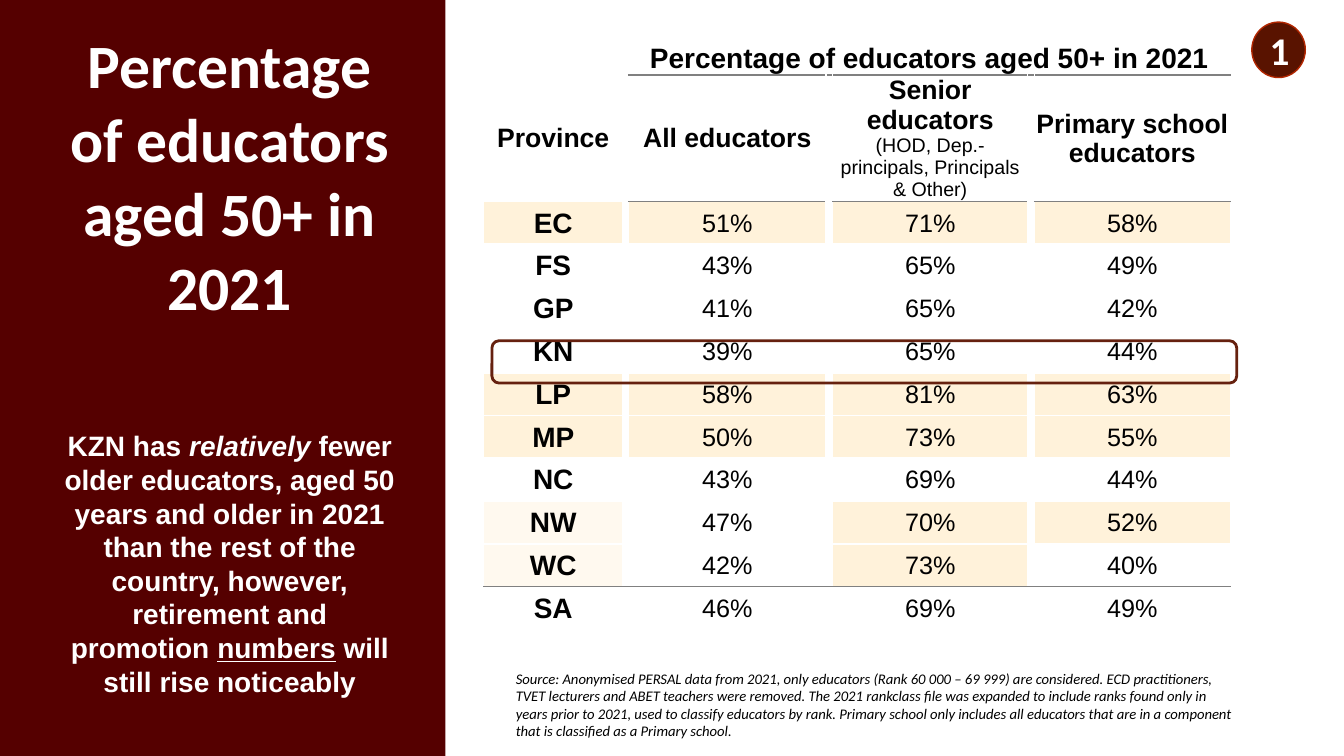
from lxml import etree
from pptx import Presentation
from pptx.dml.color import RGBColor
from pptx.enum.shapes import MSO_SHAPE
from pptx.enum.text import MSO_ANCHOR, PP_ALIGN
from pptx.oxml.ns import qn
from pptx.util import Pt

RECT, OVAL, ROUNDED = MSO_SHAPE.RECTANGLE, MSO_SHAPE.OVAL, MSO_SHAPE.ROUNDED_RECTANGLE
MIDDLE, BOTTOM, CENTER = MSO_ANCHOR.MIDDLE, MSO_ANCHOR.BOTTOM, PP_ALIGN.CENTER

COLORS = {
    "panel": "550000", "badge": "591300", "badge_line": "B22600",
    "highlight": "66210F", "high": "FFF2DA", "partly_high": "FFF9EF",
    "rule": "808080", "white": "FFFFFF", "black": "000000",
}
rgb = {name: RGBColor.from_string(value) for name, value in COLORS.items()}


def add_run(p, text, size, color="black", name="Arial", **formats):
    r = p.add_run()
    r.text = text
    r.font.color.rgb = rgb[color]
    for key, value in {"size": Pt(size), "name": name, **formats}.items():
        setattr(r.font, key, value)


def set_border(cell, position, tag, color, width):
    """Add one cell border; position keeps the borders ahead of the fill."""
    ln = etree.Element(qn(tag), w=str(Pt(width)))
    fill = etree.SubElement(ln, qn("a:solidFill"))
    etree.SubElement(fill, qn("a:srgbClr"), val=COLORS[color])
    cell._tc.get_or_add_tcPr().insert(position, ln)


prs = Presentation()
prs.slide_width, prs.slide_height = Pt(960), Pt(540)
s = prs.slides.add_slide(prs.slide_layouts[6])

# Side panel
sp = s.shapes.add_shape(RECT, Pt(0), Pt(0), Pt(318.2), Pt(540))
sp.shadow.inherit = False
sp.fill.solid()
sp.fill.fore_color.rgb = rgb["panel"]
sp.line.fill.background()

# Table of provinces
HEADERS = ["Province", "All educators", "Senior educators", "Primary school educators"]
PROVINCES = [
    ("EC", 51, 71, 58), ("FS", 43, 65, 49), ("GP", 41, 65, 42), ("KN", 39, 65, 44),
    ("LP", 58, 81, 63), ("MP", 50, 73, 55), ("NC", 43, 69, 44), ("NW", 47, 70, 52),
    ("WC", 42, 73, 40), ("SA", 46, 69, 49),
]
HIGH_FROM = (50, 70, 50)
COL_WIDTHS = [99.2, 3.8, 141, 4.9, 139.2, 4.9, 139.8]
ROW_HEIGHTS = [35.3, 90.7] + [30.57] * len(PROVINCES)
LAST_ROW = len(ROW_HEIGHTS) - 1

table = s.shapes.add_table(len(ROW_HEIGHTS), len(COL_WIDTHS), Pt(345.6), Pt(18),
                           Pt(sum(COL_WIDTHS)), Pt(sum(ROW_HEIGHTS))).table
table.first_row = table.horz_banding = False
for col, width in zip(table.columns, COL_WIDTHS):
    col.width = Pt(width)
for row, height in zip(table.rows, ROW_HEIGHTS):
    row.height = Pt(height)

# Border below each cell, shared with the cell underneath
borders = {}
for i in range(LAST_ROW):
    for j in range(len(COL_WIDTHS)):
        borders[i, j] = ("white", 1.5)
        if i == 0 and j >= 2:
            borders[i, j] = ("rule", 1.5)
        elif i == LAST_ROW - 1 or (i == 1 and j in (2, 4, 6)):
            borders[i, j] = ("rule", 0.5)

for i in range(len(ROW_HEIGHTS)):
    for j in range(len(COL_WIDTHS)):
        cell = table.cell(i, j)
        cell.margin_left = cell.margin_right = cell.margin_top = Pt(0.7)
        cell.margin_bottom = Pt(0)
        cell.vertical_anchor = MIDDLE
        cell.text_frame.paragraphs[0].alignment = CENTER
        cell.fill.background()
        position = 0
        for tag, key in (("a:lnT", (i - 1, j)), ("a:lnB", (i, j))):
            if key in borders:
                set_border(cell, position, tag, *borders[key])
                position += 1

heading = table.cell(0, 2)
heading.merge(table.cell(0, 6))
heading.vertical_anchor = BOTTOM
add_run(heading.text_frame.paragraphs[0], "Percentage of educators aged 50+ in 2021",
        20, bold=True)

for k, text in enumerate(HEADERS):
    add_run(table.cell(1, 2 * k).text_frame.paragraphs[0], text, 19, bold=True)
p = table.cell(1, 4).text_frame.paragraphs[0]
p.add_line_break()
add_run(p, "(HOD, Dep.- principals, Principals & Other)", 14, bold=False)

for i, (province, *shares) in enumerate(PROVINCES, start=2):
    high = [share >= limit and province != "SA" for share, limit in zip(shares, HIGH_FROM)]
    if province in ("FS", "GP", "KN", "NC", "SA"):
        fills = [None]
    else:
        fills = ["high" if all(high) else "partly_high"]
    fills += ["high" if is_high else None for is_high in high]
    texts = [province] + [f"{share}%" for share in shares]
    for k, (text, fill) in enumerate(zip(texts, fills)):
        cell = table.cell(i, 2 * k)
        add_run(cell.text_frame.paragraphs[0], text, 18 if k else 20, bold=k == 0)
        if fill:
            cell.fill.solid()
            cell.fill.fore_color.rgb = rgb[fill]

# Title and message on the panel
tf = s.shapes.add_textbox(Pt(36.7), Pt(36), Pt(254.9), Pt(486)).text_frame
tf.word_wrap = True
tf.vertical_anchor = MIDDLE
tf.margin_bottom = Pt(44)
p = tf.paragraphs[0]
p.alignment = CENTER
add_run(p, "Percentage of educators aged 50+ in 2021", 44, "white", "Calibri", bold=True)
p = tf.add_paragraph()
p.alignment = CENTER
p.space_before = Pt(76)
p.line_spacing = Pt(24)
for text, formats in (
    ("KZN has ", {}),
    ("relatively", {"italic": True}),
    (" fewer older educators, aged 50 years and older in 2021 than the rest of the "
     "country, however, retirement and promotion ", {}),
    ("numbers", {"underline": True}),
    (" will still rise noticeably", {}),
):
    add_run(p, text, 20, "white", bold=True, **formats)

# Number badge
sp = s.shapes.add_shape(OVAL, Pt(894.2), Pt(15.8), Pt(38.2), Pt(39.6))
sp.shadow.inherit = False
sp.fill.solid()
sp.fill.fore_color.rgb = rgb["badge"]
sp.line.color.rgb = rgb["badge_line"]
sp.line.width = Pt(1)
sp.text_frame.vertical_anchor = MIDDLE
p = sp.text_frame.paragraphs[0]
p.alignment = CENTER
add_run(p, "1", 28, "white", "Calibri", bold=True)

# Source note
tf = s.shapes.add_textbox(Pt(361.4), Pt(474.6), Pt(532), Pt(39.6)).text_frame
tf.word_wrap = True
add_run(tf.paragraphs[0],
        "Source: Anonymised PERSAL data from 2021, only educators (Rank 60 000 – 69 999) are "
        "considered. ECD practitioners, TVET lecturers and ABET teachers were removed. The 2021 "
        "rankclass file was expanded to include ranks found only in years prior to 2021, used to "
        "classify educators by rank. Primary school only includes all educators that are in a "
        "component that is classified as a Primary school.",
        10.5, name="Calibri", italic=True)

# Highlight frame
sp = s.shapes.add_shape(ROUNDED, Pt(351.4), Pt(243.4), Pt(532), Pt(30.2))
sp.shadow.inherit = False
sp.fill.background()
sp.line.color.rgb = rgb["highlight"]
sp.line.width = Pt(2)

prs.save("out.pptx")
